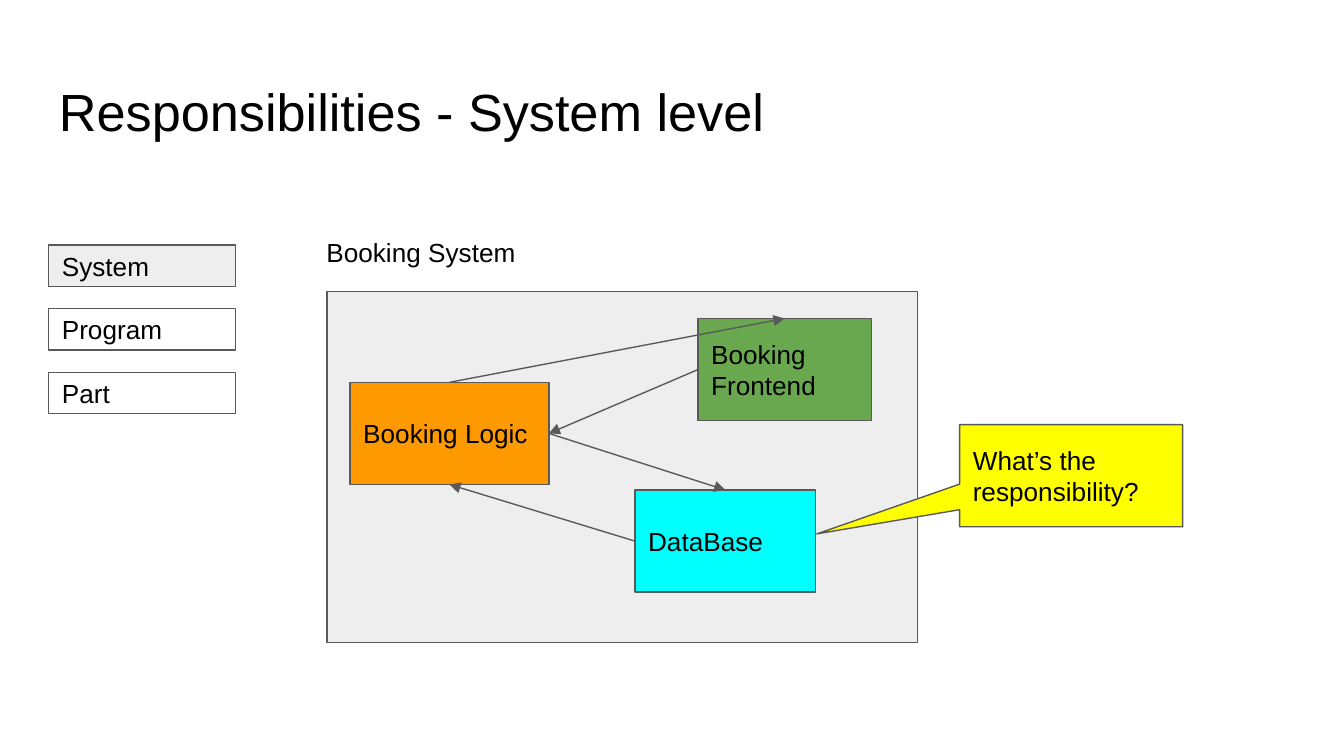
"""Build the system-level responsibilities slide on a grid of 0.1 inch cells."""
from lxml import etree
from pptx import Presentation, util as u
from pptx.dml.color import RGBColor
from pptx.enum import shapes, text
from pptx.oxml.ns import qn

COLORS = {"ink": "000000", "line": "595959", "system": "EEEEEE", "logic": "FF9900",
          "data": "00FFFF", "frontend": "6AA84F", "question": "FFFF00"}
CELL = u.Inches(0.1)
COLUMNS, ROWS = 100, 56.25
PART_HEIGHT = 7.6
LABELS = [
    ("Responsibilities - System level", 28, (3.41, 4.87, 93.18, 6.26)),
    ("Booking System", 14, (23.3, 16.6, 54.5, 6.4)),
]
SYSTEM_AREA = (24.33, 21.7, 43.93, 26.1)
PARTS = {
    "logic": ("Booking Logic", 26.04, 28.45, 14.8),
    "data": ("DataBase", 47.24, 36.46, 13.45),
    "frontend": ("Booking Frontend", 51.93, 23.7, 12.9),
}
SITES = {"top": 0, "left": 1, "bottom": 2, "right": 3}
ARROWS = [
    ("logic", "right", "data", "top"),
    ("data", "left", "logic", "bottom"),
    ("logic", "top", "frontend", "top"),
    ("frontend", "left", "logic", "right"),
]
QUESTION = ("What’s the responsibility?", (71.4, 31.6, 16.6, PART_HEIGHT))
POINTER = (-1.14, 0.57, 0)
LEGEND = [("System", "system"), ("Program", None), ("Part", None)]
LEGEND_LEFT, LEGEND_TOP, LEGEND_WIDTH, LEGEND_HEIGHT, LEGEND_STEP = 3.62, 18.24, 13.9, 3.07, 4.73


def color(name):
    return RGBColor.from_string(COLORS[name])


def cells(lengths):
    return [int(length * CELL) for length in lengths]


def write(box, words, size, anchor):
    frame = box.text_frame
    frame.word_wrap = True
    frame.vertical_anchor = anchor
    frame.margin_left = frame.margin_right = frame.margin_top = frame.margin_bottom = CELL
    para = frame.paragraphs[0]
    para.alignment = text.PP_ALIGN.LEFT
    span = para.add_run()
    span.text = words
    span.font.name, span.font.size = "Arial", u.Pt(size)
    span.font.color.rgb = color("ink")


def add_label(page, words, size, place):
    box = page.shapes.add_textbox(*cells(place))
    write(box, words, size, text.MSO_ANCHOR.TOP)


def add_box(page, place, fill, words=None, kind=shapes.MSO_SHAPE.RECTANGLE):
    box = page.shapes.add_shape(kind, *cells(place))
    box.shadow.inherit = False
    if fill:
        box.fill.solid()
        box.fill.fore_color.rgb = color(fill)
    else:
        box.fill.background()
    box.line.color.rgb = color("line")
    box.line.width = u.Pt(0.75)
    if words:
        write(box, words, 14, text.MSO_ANCHOR.MIDDLE)
    return box


def add_arrow(page, start, start_site, end, end_site):
    arrow = page.shapes.add_connector(shapes.MSO_CONNECTOR.STRAIGHT, 0, 0, 0, 0)
    arrow.begin_connect(start, SITES[start_site])
    arrow.end_connect(end, SITES[end_site])
    arrow.line.color.rgb = color("line")
    arrow.line.width = u.Pt(0.75)
    etree.SubElement(arrow.line._get_or_add_ln(), qn("a:tailEnd"), type="triangle")
    etree.SubElement(arrow._element.spPr, qn("a:effectLst"))


def main():
    deck = Presentation()
    deck.slide_width, deck.slide_height = cells((COLUMNS, ROWS))
    page = deck.slides.add_slide(deck.slide_layouts[6])

    for label in LABELS:
        add_label(page, *label)
    add_box(page, SYSTEM_AREA, "system")
    parts = {name: add_box(page, (left, top, width, PART_HEIGHT), name, words)
             for name, (words, left, top, width) in PARTS.items()}
    for start, start_site, end, end_site in ARROWS:
        add_arrow(page, parts[start], start_site, parts[end], end_site)

    words, place = QUESTION
    callout = add_box(page, place, "question", words,
                      shapes.MSO_SHAPE.ROUNDED_RECTANGULAR_CALLOUT)
    for index, value in enumerate(POINTER):
        callout.adjustments[index] = value

    for row, (words, fill) in enumerate(LEGEND):
        top = LEGEND_TOP + row * LEGEND_STEP
        add_box(page, (LEGEND_LEFT, top, LEGEND_WIDTH, LEGEND_HEIGHT), fill, words)

    deck.save("out.pptx")


if __name__ == "__main__":
    main()
